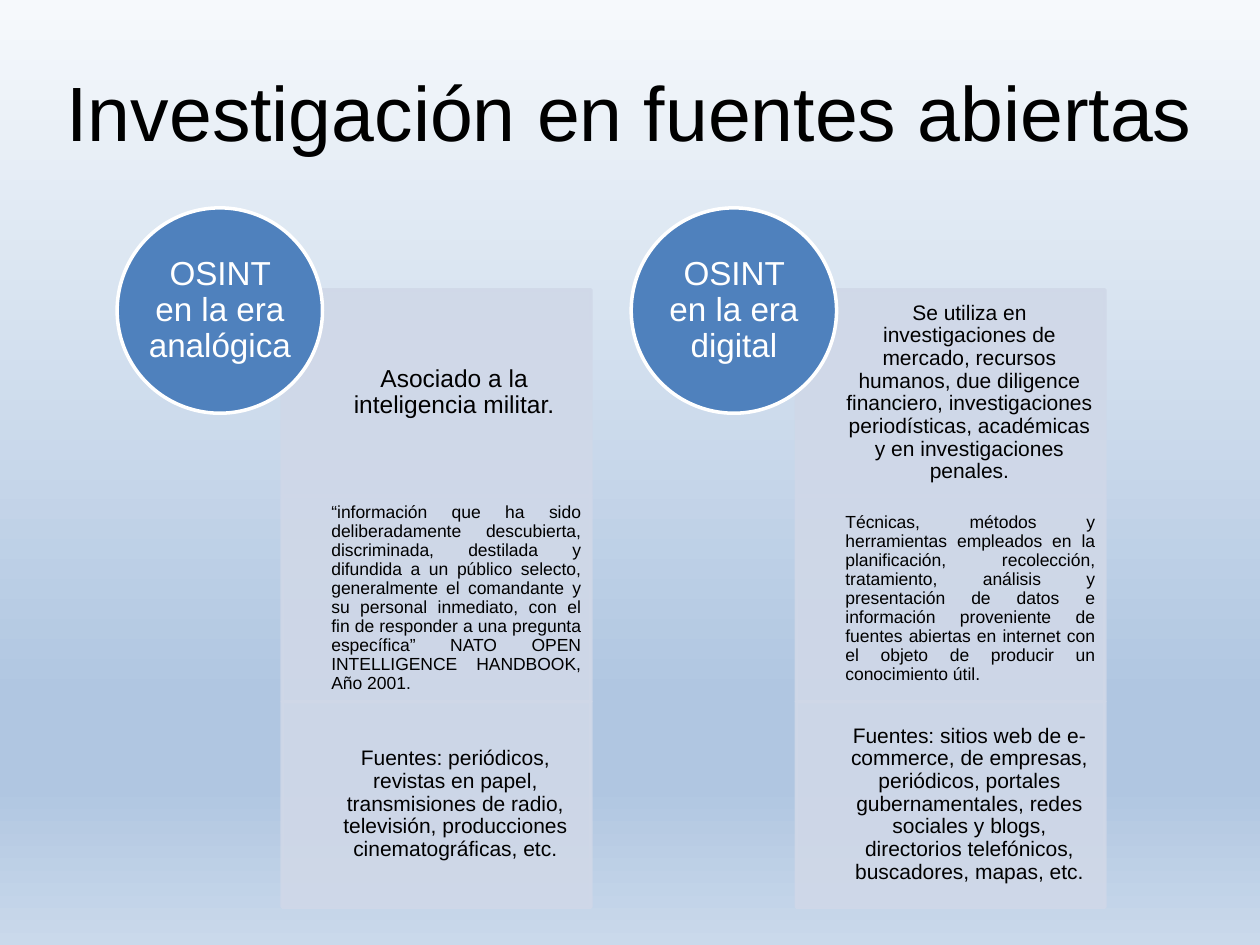
from lxml.etree import SubElement
from pptx import Presentation
from pptx.dml.color import RGBColor
from pptx.enum.shapes import MSO_SHAPE
from pptx.enum.text import MSO_ANCHOR, PP_ALIGN
from pptx.oxml.ns import qn
from pptx.util import Inches, Pt

BLACK = RGBColor(0x00, 0x00, 0x00)
WHITE = RGBColor(0xFF, 0xFF, 0xFF)
BLUE = RGBColor(0x4F, 0x81, 0xBD)
PANEL = RGBColor(0xD0, 0xD8, 0xE8)
SKY = [
    (0, RGBColor(0xF6, 0xF9, 0xFC)),
    (74, RGBColor(0xB0, 0xC6, 0xE1)),
    (83, RGBColor(0xB0, 0xC6, 0xE1)),
    (100, RGBColor(0xCA, 0xD9, 0xEB)),
]

# Grid, in inches
FIRST_LEFT, COLUMN_STEP = 2.24, 4.08
FIRST_TOP, ROW_HEIGHT = 2.3, 4.9 / 3
PANEL_WIDTH, TEXT_INDENT = 2.45, 0.39
CIRCLE_SIZE, CIRCLE_SHIFT, CIRCLE_TOP = 1.63, 1.31, 1.65
LABEL_SIZE = 1.15

CENTER, JUSTIFY = PP_ALIGN.CENTER, PP_ALIGN.JUSTIFY

# Each column: heading, then (text, size, alignment, inset) for each row
COLUMNS = [
    ("OSINT en la era analógica", [
        ("Asociado a la inteligencia militar.", 14, CENTER, 0.11),
        ("“información que ha sido deliberadamente descubierta, discriminada, "
         "destilada y difundida a un público selecto, generalmente el "
         "comandante y su personal inmediato, con el fin de responder a una "
         "pregunta específica” NATO OPEN INTELLIGENCE HANDBOOK, Año 2001.",
         10, JUSTIFY, 0.08),
        ("Fuentes: periódicos, revistas en papel, transmisiones de radio, "
         "televisión, producciones cinematográficas, etc.", 12, CENTER, 0.09),
    ]),
    ("OSINT en la era digital", [
        ("Se utiliza en investigaciones de mercado, recursos humanos, due "
         "diligence financiero, investigaciones periodísticas, académicas y "
         "en investigaciones penales.", 12, CENTER, 0.09),
        ("Técnicas, métodos y herramientas empleados en la planificación, "
         "recolección, tratamiento, análisis y presentación de datos e "
         "información proveniente de fuentes abiertas en internet con el "
         "objeto de producir un conocimiento útil.", 10, JUSTIFY, 0.08),
        ("Fuentes: sitios web de e-commerce, de empresas, periódicos, portales "
         "gubernamentales, redes sociales y blogs, directorios telefónicos, "
         "buscadores, mapas, etc.", 12, CENTER, 0.09),
    ]),
]

deck = Presentation()
deck.slide_width, deck.slide_height = Inches(10), Inches(7.5)
page = deck.slides.add_slide(deck.slide_layouts[6])


def write(text, left, top, width, height, size, color=BLACK, align=CENTER, inset=0):
    """Add a text box; the inset applies to every side but the left."""
    box = page.shapes.add_textbox(*map(Inches, (left, top, width, height)))
    frame = box.text_frame
    frame.word_wrap = True
    frame.vertical_anchor = MSO_ANCHOR.MIDDLE
    frame.margin_left = 0
    frame.margin_top = frame.margin_right = frame.margin_bottom = Inches(inset)
    para = frame.paragraphs[0]
    para.alignment = align
    para.line_spacing = 0.9
    span = para.add_run()
    span.text = text
    span.font.name = "Arial"
    span.font.size = Pt(size)
    span.font.color.rgb = color


def draw(kind, left, top, width, height, fill, line, opacity=100):
    shape = page.shapes.add_shape(kind, *map(Inches, (left, top, width, height)))
    shape.shadow.inherit = False
    shape.fill.solid()
    shape.fill.fore_color.rgb = fill
    shape.line.color.rgb = line
    shape.line.width = Pt(2)
    if opacity < 100:
        for color in shape.element.spPr.iter(qn("a:srgbClr")):
            SubElement(color, qn("a:alpha"), val=str(opacity * 1000))


# Background gradient, from top to bottom
backdrop = page.background.fill
backdrop.gradient()
backdrop.gradient_angle = 270
stops = next(page.element.iter(qn("a:gsLst")))
for stop in list(stops):
    stops.remove(stop)
for position, color in SKY:
    stop = SubElement(stops, qn("a:gs"), pos=str(position * 1000))
    SubElement(stop, qn("a:srgbClr"), val=str(color))

write("Investigación en fuentes abiertas", 0.5, 0.59, 9, 0.67, 44)

for column, (heading, rows) in enumerate(COLUMNS):
    left = FIRST_LEFT + column * COLUMN_STEP
    for row, (text, size, align, inset) in enumerate(rows):
        top = FIRST_TOP + row * ROW_HEIGHT
        draw(MSO_SHAPE.RECTANGLE, left, top, PANEL_WIDTH, ROW_HEIGHT,
             PANEL, PANEL, opacity=90)
        write(text, left + TEXT_INDENT, top, PANEL_WIDTH - TEXT_INDENT, ROW_HEIGHT,
              size, align=align, inset=inset)

    circle_left = left - CIRCLE_SHIFT
    margin = (CIRCLE_SIZE - LABEL_SIZE) / 2
    draw(MSO_SHAPE.OVAL, circle_left, CIRCLE_TOP, CIRCLE_SIZE, CIRCLE_SIZE, BLUE, WHITE)
    write(heading, circle_left + margin, CIRCLE_TOP + margin, LABEL_SIZE, LABEL_SIZE,
          19, color=WHITE)

deck.save("out.pptx")
